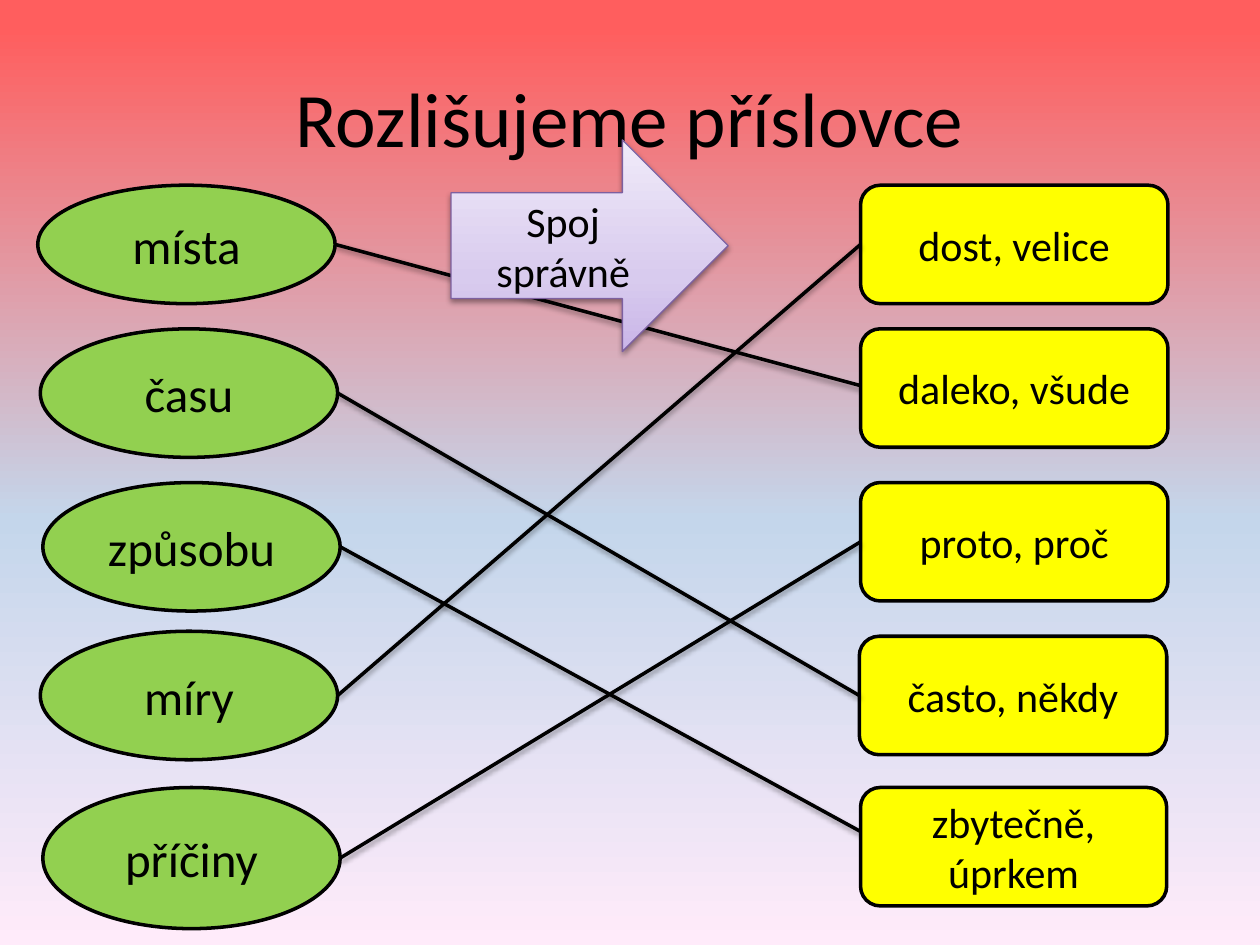
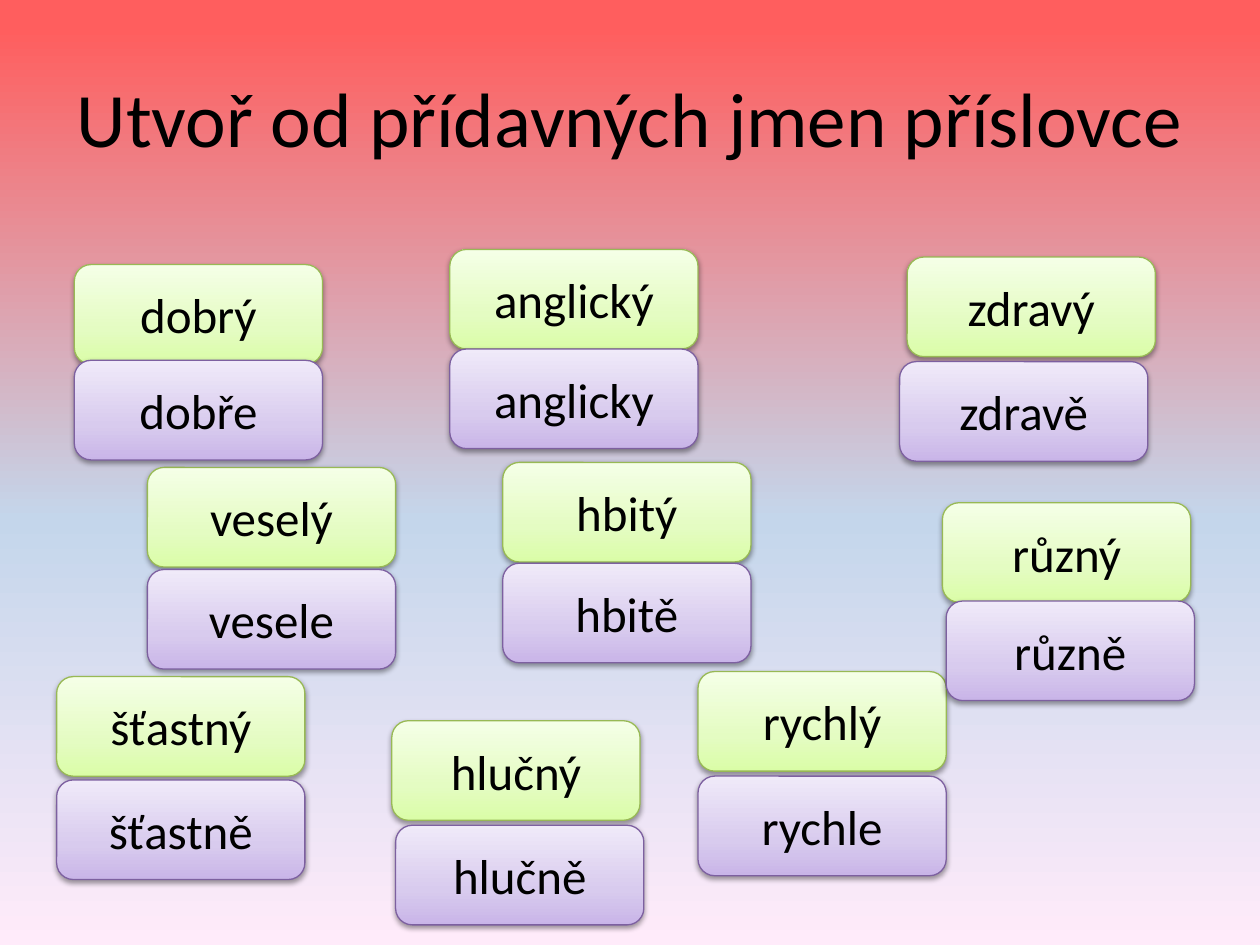
from dataclasses import dataclass
from typing import NamedTuple, Optional, Union

from lxml.etree import SubElement
from pptx import Presentation
from pptx.dml.color import RGBColor
from pptx.enum.shapes import MSO_CONNECTOR as CONN, MSO_SHAPE as SHAPE
from pptx.enum.text import MSO_ANCHOR as ANCHOR, PP_ALIGN as ALIGN
from pptx.oxml.ns import qn
from pptx.util import Emu, Pt

PX = 9144  # EMU per px, 100 px to the inch
LEFT_SIDE = 1  # connection site of a rectangle


class Box(NamedTuple):
    x: int
    y: int
    w: int
    h: int


class Gradient(NamedTuple):
    stops: tuple
    angle: int


@dataclass(frozen=True)
class Style:
    preset: SHAPE
    fill: Union[str, Gradient]
    line: str
    weight: float
    size: int
    shadow: bool


@dataclass(frozen=True)
class Theme:
    font: str = "Calibri"
    ink: str = "000000"
    title: int = 44
    word: int = 28
    example: int = 24
    thin: float = 0.75
    thick: float = 2
    green: str = "92D050"
    yellow: str = "FFFF00"
    lime_edge: str = "98B955"
    violet_edge: str = "7D60A0"
    lime: Gradient = Gradient(((0, "DAFDA7"), (35, "E4FCC2"), (100, "F5FFE7")), 270)
    violet: Gradient = Gradient(((0, "C9B5E8"), (35, "D8CBEE"), (100, "F0EAF9")), 270)
    sky: Gradient = Gradient(((3, "FF5E5E"), (55, "C4D6EB"), (100, "FFEBFA")), 90)


T = Theme()
KIND = Style(SHAPE.OVAL, T.green, T.ink, T.thick, T.word, False)
EXAMPLE = Style(SHAPE.FLOWCHART_ALTERNATE_PROCESS, T.yellow, T.ink, T.thick, T.example, False)
TASK = Style(SHAPE.RIGHT_ARROW, T.violet, T.violet_edge, T.thin, T.example, True)
ADJECTIVE = Style(SHAPE.ROUNDED_RECTANGLE, T.lime, T.lime_edge, T.thin, T.word, True)
ADVERB = Style(SHAPE.ROUNDED_RECTANGLE, T.violet, T.violet_edge, T.thin, T.word, True)


class Label(NamedTuple):
    text: str
    box: Box


class Match(NamedTuple):
    kind: str
    example: str
    hidden_end: Optional[tuple] = None  # end point tucked behind the example


class Pair(NamedTuple):
    adjective: str
    adjective_at: tuple
    adverb: str
    adverb_at: tuple


TITLE_BOX = Box(50, 30, 900, 125)
WORD_SIZE = (197, 79)

KINDS = (
    Label("místa", Box(30, 147, 236, 94)),
    Label("času", Box(32, 261, 236, 102)),
    Label("způsobu", Box(34, 383, 236, 102)),
    Label("míry", Box(32, 501, 236, 102)),
    Label("příčiny", Box(34, 625, 236, 112)),
)
EXAMPLES = (
    Label("dost, velice", Box(683, 147, 244, 94)),
    Label("daleko, všude", Box(683, 261, 244, 94)),
    Label("proto, proč", Box(683, 383, 244, 94)),
    Label("často, někdy", Box(682, 505, 244, 94)),
    Label("zbytečně, úprkem", Box(683, 625, 243, 94)),
)
MATCHES = (
    Match("místa", "daleko, všude", (705, 312)),
    Match("způsobu", "zbytečně, úprkem", (705, 672)),
    Match("času", "často, někdy"),
    Match("míry", "dost, velice"),
    Match("příčiny", "proto, proč"),
)
PAIRS = (
    Pair("dobrý", (59, 210), "dobře", (59, 286)),
    Pair("anglický", (357, 198), "anglicky", (357, 277)),
    Pair("zdravý", (720, 204), "zdravě", (714, 287)),
    Pair("veselý", (117, 371), "vesele", (117, 452)),
    Pair("hbitý", (399, 367), "hbitě", (399, 447)),
    Pair("různý", (748, 399), "různě", (751, 477)),
    Pair("šťastný", (45, 537), "šťastně", (45, 619)),
    Pair("hlučný", (311, 572), "hlučně", (314, 655)),
    Pair("rychlý", (554, 533), "rychle", (554, 616)),
)


def emu(*lengths: int) -> list:
    return [Emu(round(n * PX)) for n in lengths]


def rgb(color: str) -> RGBColor:
    return RGBColor.from_string(color)


# Formatting helpers
def apply_fill(fill, holder, paint: Union[str, Gradient]) -> None:
    """Fill with one colour, or swap the solid fill in holder for a gradient."""
    fill.solid()
    if isinstance(paint, str):
        fill.fore_color.rgb = rgb(paint)
        return
    solid = holder.find(qn("a:solidFill"))
    grad = holder.makeelement(qn("a:gradFill"), {"rotWithShape": "1"})
    stops = SubElement(grad, qn("a:gsLst"))
    for pos, color in paint.stops:
        gs = SubElement(stops, qn("a:gs"), pos=str(pos * 1000))
        SubElement(gs, qn("a:srgbClr"), val=color)
    SubElement(grad, qn("a:lin"), ang=str(paint.angle * 60000), scaled="0")
    holder.replace(solid, grad)


def apply_line(line, color: str, weight: float) -> None:
    line.color.rgb = rgb(color)
    line.width = Pt(weight)


def apply_shadow(sp_pr, shadow: bool) -> None:
    effects = SubElement(sp_pr, qn("a:effectLst"))
    if shadow:
        outer = SubElement(effects, qn("a:outerShdw"), blurRad="40000",
                           dist="20000", dir="5400000", rotWithShape="0")
        clr = SubElement(outer, qn("a:srgbClr"), val=T.ink)
        SubElement(clr, qn("a:alpha"), val="38000")


def write(tf, text: str, *, size: int, color: str = T.ink, align=ALIGN.CENTER) -> None:
    tf.word_wrap = True
    tf.vertical_anchor = ANCHOR.MIDDLE
    p = tf.paragraphs[0]
    p.alignment = align
    r = p.add_run()
    r.text = text
    r.font.name = T.font
    r.font.size = Pt(size)
    r.font.color.rgb = rgb(color)


# Drawing functions
def new_slide(prs, title: str):
    s = prs.slides.add_slide(prs.slide_layouts[6])
    fill = s.background.fill
    fill.solid()
    apply_fill(fill, s.element.find(".//" + qn("p:bgPr")), T.sky)
    write(s.shapes.add_textbox(*emu(*TITLE_BOX)).text_frame, title, size=T.title)
    return s


def draw_label(s, label: Label, style: Style):
    sp = s.shapes.add_shape(style.preset, *emu(*label.box))
    apply_fill(sp.fill, sp.element.spPr, style.fill)
    apply_line(sp.line, style.line, style.weight)
    apply_shadow(sp.element.spPr, style.shadow)
    write(sp.text_frame, label.text, size=style.size)
    return sp


def draw_match(s, kind, example, hidden_end: Optional[tuple]) -> None:
    start = (kind.left + kind.width, kind.top + kind.height // 2)
    end = emu(*hidden_end) if hidden_end else (example.left, example.top)
    c = s.shapes.add_connector(CONN.STRAIGHT, *start, *end)
    if hidden_end:
        s.shapes.element.insert(2, c.element)  # behind every shape
    else:
        c.end_connect(example, LEFT_SIDE)
    apply_line(c.line, T.ink, T.thick)
    apply_shadow(c.element.spPr, True)


# Slides
def build_matching(prs) -> None:
    s = new_slide(prs, "Rozlišujeme příslovce")
    kinds = {k.text: draw_label(s, k, KIND) for k in KINDS}
    draw_label(s, Label("Spoj správně", Box(358, 111, 220, 168)), TASK)
    examples = {e.text: draw_label(s, e, EXAMPLE) for e in EXAMPLES}
    for m in MATCHES:
        draw_match(s, kinds[m.kind], examples[m.example], m.hidden_end)


def build_word_pairs(prs) -> None:
    s = new_slide(prs, "Utvoř od přídavných jmen příslovce")
    for pair in PAIRS:
        draw_label(s, Label(pair.adjective, Box(*pair.adjective_at, *WORD_SIZE)), ADJECTIVE)
    for pair in PAIRS:
        draw_label(s, Label(pair.adverb, Box(*pair.adverb_at, *WORD_SIZE)), ADVERB)


def main() -> None:
    prs = Presentation()
    prs.slide_width, prs.slide_height = emu(1000, 750)
    build_matching(prs)
    build_word_pairs(prs)
    prs.save("out.pptx")


if __name__ == "__main__":
    main()
